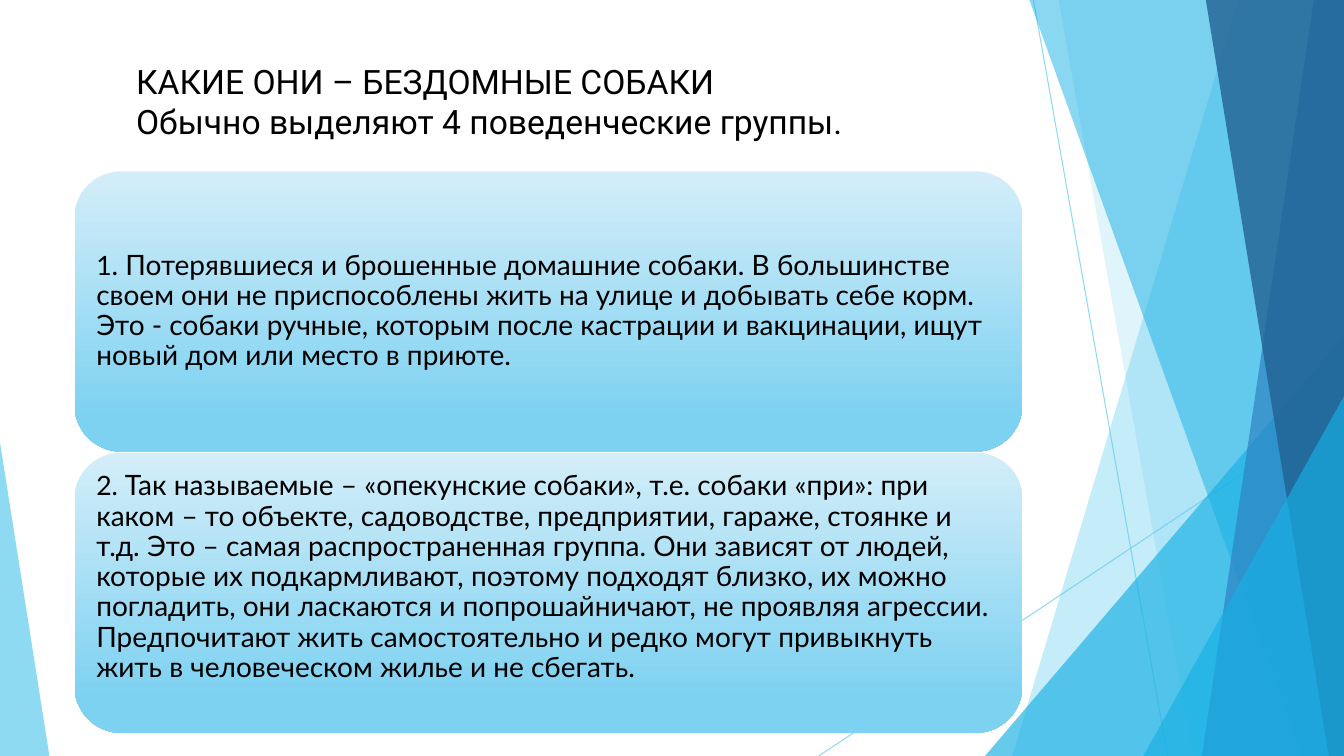
from dataclasses import dataclass

from pptx import Presentation
from pptx.dml.color import RGBColor
from pptx.enum.shapes import MSO_CONNECTOR as Connector, MSO_SHAPE as Preset
from pptx.enum.text import MSO_ANCHOR as Anchor, MSO_AUTO_SIZE as AutoSize, PP_ALIGN as Align
from pptx.oxml.ns import qn
from pptx.shapes.base import BaseShape
from pptx.slide import Slide
from pptx.text.text import TextFrame
from pptx.util import Inches, Pt

WIDTH, HEIGHT = 13.33, 7.5


@dataclass(frozen=True)
class Theme:
    sky: str = "5FCBEF"
    azure: str = "17B0E4"
    blue: str = "2E83C3"
    navy: str = "226292"
    card_top: str = "D4EEF9"
    card_bottom: str = "7DD1F1"
    text: str = "000000"
    title_font: str = "Roboto"
    body_font: str = "Lato"
    title_size: int = 24
    number_size: int = 19
    body_size: int = 20


THEME = Theme()


@dataclass(frozen=True)
class Ray:
    start: tuple[float, float]
    end: tuple[float, float]


@dataclass(frozen=True)
class Band:
    """A full-height facet that reaches the right edge of the slide."""
    top_left: float
    bottom_left: float
    color: str
    opacity: int


@dataclass(frozen=True)
class Corner:
    """A right triangle standing on the bottom edge; apex is 0 (left) or 1 (right)."""
    left: float
    width: float
    height: float
    apex: int
    color: str
    opacity: int


@dataclass(frozen=True)
class Card:
    number: str
    body: str
    bottom_inset: float = 0.08


RAYS = [Ray((10.25, 0), (11.58, HEIGHT)), Ray((WIDTH, 4.03), (8.12, HEIGHT))]

FACETS = [
    Band(12.28, 10.04, THEME.sky, 36),
    Band(10.5, 11.83, THEME.sky, 20),
    Corner(9.77, 3.56, 4.17, 1, THEME.azure, 66),
    Band(10.21, 12.91, THEME.azure, 50),
    Band(13.03, 11.92, THEME.blue, 70),
    Band(11.96, 13.18, THEME.navy, 80),
    Corner(11.34, 1.99, 3.57, 1, THEME.azure, 66),
    Corner(0, 0.49, 3.11, 0, THEME.sky, 70),
]

TITLE_LINES = ["КАКИЕ ОНИ – БЕЗДОМНЫЕ СОБАКИ", "Обычно выделяют 4 поведенческие группы."]

CARDS = [
    Card("1", ". Потерявшиеся и брошенные домашние собаки. В большинстве своем они не "
              "приспособлены жить на улице и добывать себе корм. Это - собаки ручные, "
              "которым после кастрации и вакцинации, ищут новый дом или место в приюте."),
    Card("2. ", "Так называемые – «опекунские собаки», т.е. собаки «при»: при каком – то "
                "объекте, садоводстве, предприятии, гараже, стоянке и т.д. Это – самая "
                "распространенная группа. Они зависят от людей, которые их подкармливают, "
                "поэтому подходят близко, их можно погладить, они ласкаются и "
                "попрошайничают, не проявляя агрессии. Предпочитают жить самостоятельно и "
                "редко могут привыкнуть жить в человеческом жилье и не сбегать.",
         bottom_inset=0.38),
]
CARD_LEFT, CARD_TOP, CARD_WIDTH, CARD_HEIGHT, CARD_PITCH = 0.74, 1.7, 9.4, 2.78, 2.79


def set_opacity(shape: BaseShape, percent: int) -> None:
    for color in shape.element.xpath(".//a:srgbClr"):
        color.append(color.makeelement(qn("a:alpha"), {"val": str(percent * 1000)}))


def draw_ray(slide: Slide, ray: Ray) -> None:
    line = slide.shapes.add_connector(
        Connector.STRAIGHT, *(Inches(value) for value in ray.start + ray.end))
    line.line.color.rgb = RGBColor.from_string(THEME.sky)
    line.line.width = Pt(0.75)
    set_opacity(line, 70)
    properties = line.element.spPr
    properties.append(properties.makeelement(qn("a:effectLst"), {}))


def draw_facet(slide: Slide, facet: Band | Corner) -> None:
    if isinstance(facet, Band):
        outline = slide.shapes.build_freeform(Inches(facet.top_left), 0)
        corners = [(WIDTH, 0), (WIDTH, HEIGHT), (facet.bottom_left, HEIGHT)]
        outline.add_line_segments([(Inches(x), Inches(y)) for x, y in corners], close=True)
        shape = outline.convert_to_shape()
    else:
        shape = slide.shapes.add_shape(
            Preset.ISOSCELES_TRIANGLE, Inches(facet.left), Inches(HEIGHT - facet.height),
            Inches(facet.width), Inches(facet.height))
        shape.adjustments[0] = facet.apex
    shape.shadow.inherit = False
    shape.line.fill.background()
    shape.fill.solid()
    shape.fill.fore_color.rgb = RGBColor.from_string(facet.color)
    set_opacity(shape, facet.opacity)


def add_run(frame: TextFrame, text: str, font: str, size: int) -> None:
    run = frame.paragraphs[0].add_run()
    run.text = text
    run.font.name = font
    run.font.size = Pt(size)
    run.font.color.rgb = RGBColor.from_string(THEME.text)


def write_title(slide: Slide) -> None:
    title = slide.shapes.title
    title.left, title.top = Inches(1.25), Inches(0.55)
    title.width, title.height = Inches(11.5), Inches(1.45)
    title.element.getparent().append(title.element)  # bring above the facets
    frame = title.text_frame
    frame.word_wrap = True
    frame.auto_size = AutoSize.NONE
    frame.vertical_anchor = Anchor.TOP
    paragraph = frame.paragraphs[0]
    paragraph.alignment = Align.LEFT
    for index, line in enumerate(TITLE_LINES):
        if index:
            paragraph.add_line_break()
        add_run(frame, line, THEME.title_font, THEME.title_size)


def draw_card(slide: Slide, card: Card, top: float) -> None:
    shape = slide.shapes.add_shape(
        Preset.ROUNDED_RECTANGLE, Inches(CARD_LEFT), Inches(top),
        Inches(CARD_WIDTH), Inches(CARD_HEIGHT))
    shape.shadow.inherit = False
    shape.line.fill.background()
    shape.fill.gradient()
    shape.fill.gradient_angle = 270
    stops = [(0, THEME.card_top), (0.88, THEME.card_bottom)]
    for stop, (position, color) in zip(shape.fill.gradient_stops, stops):
        stop.position = position
        stop.color.rgb = RGBColor.from_string(color)

    frame = shape.text_frame
    frame.word_wrap = True
    frame.vertical_anchor = Anchor.MIDDLE
    frame.margin_left = frame.margin_right = frame.margin_top = Inches(0.08)
    frame.margin_bottom = Inches(card.bottom_inset)
    frame.paragraphs[0].alignment = Align.LEFT
    frame.paragraphs[0].line_spacing = 0.9
    add_run(frame, card.number, THEME.body_font, THEME.number_size)
    add_run(frame, card.body, THEME.body_font, THEME.body_size)


def main() -> None:
    deck = Presentation()
    deck.slide_width, deck.slide_height = Inches(WIDTH), Inches(HEIGHT)
    slide = deck.slides.add_slide(deck.slide_layouts.get_by_name("Title Only"))
    for ray in RAYS:
        draw_ray(slide, ray)
    for facet in FACETS:
        draw_facet(slide, facet)
    write_title(slide)
    for index, card in enumerate(CARDS):
        draw_card(slide, card, CARD_TOP + index * CARD_PITCH)
    deck.save("out.pptx")


if __name__ == "__main__":
    main()
